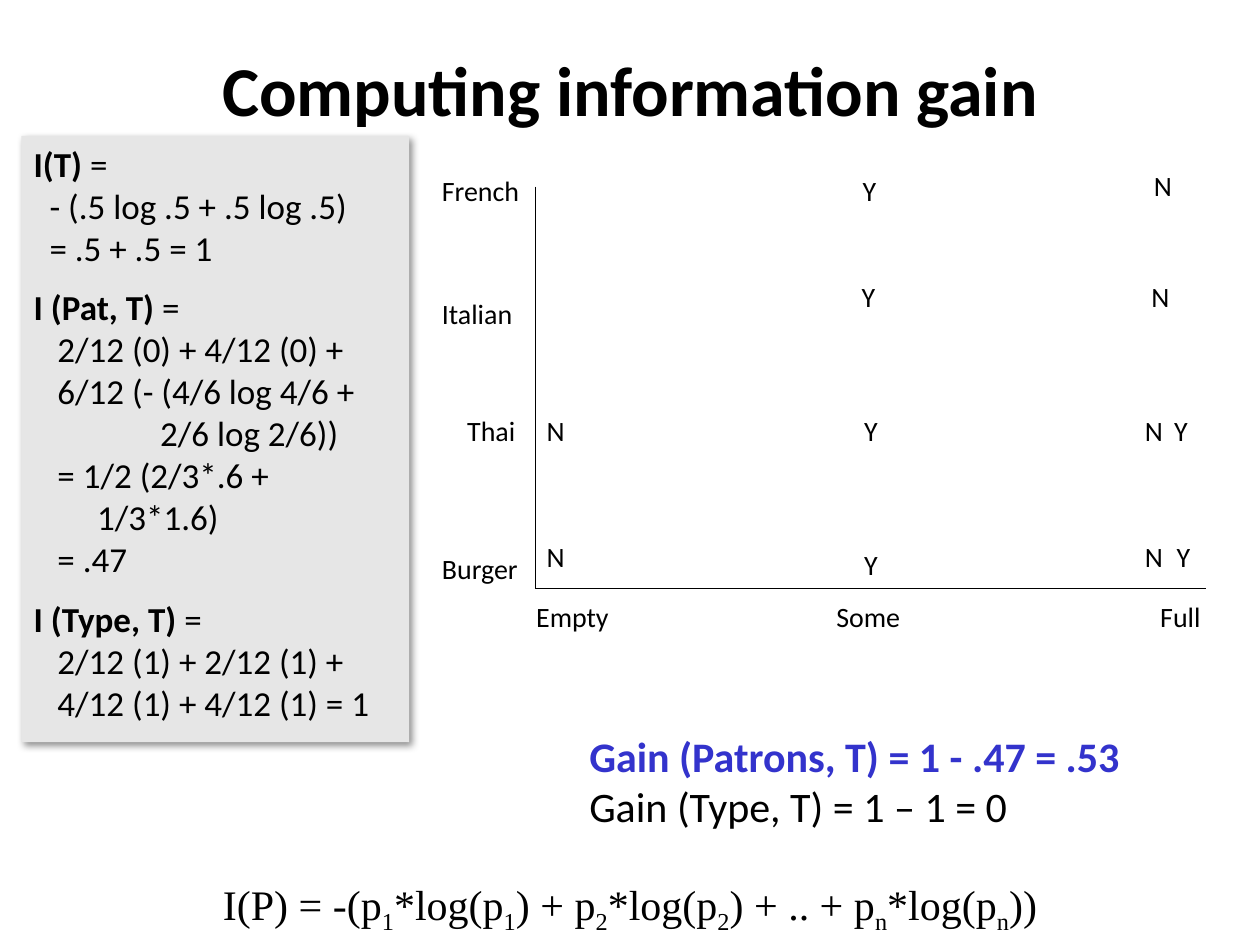
from lxml.etree import SubElement
from pptx import Presentation
from pptx.dml.color import RGBColor
from pptx.enum.shapes import MSO_CONNECTOR, MSO_SHAPE
from pptx.enum.text import MSO_ANCHOR, MSO_AUTO_SIZE, PP_ALIGN
from pptx.oxml.ns import qn
from pptx.util import Cm, Pt

BLACK = RGBColor(0x00, 0x00, 0x00)
BLUE = RGBColor(0x33, 0x33, 0xCC)
GRAY = RGBColor(0xE6, 0xE6, 0xE6)
SANS, SERIF = "Calibri", "Times New Roman"

# Heading of each entropy, then (indent in cm, line)
ENTROPIES = [
    ("I(T)", [(0.32, "- (.5 log .5 + .5 log .5)"), (0.32, "= .5 + .5 = 1")]),
    ("I (Pat, T)", [
        (0.48, "2/12 (0) + 4/12 (0) +"),
        (0.48, "6/12 (- (4/6 log 4/6 +"),
        (2.55, "2/6 log 2/6))"),
        (0.48, "= 1/2 (2/3*.6 +"),
        (1.28, "1/3*1.6)"),
        (0.48, "= .47"),
    ]),
    ("I (Type, T)", [(0.48, "2/12 (1) + 2/12 (1) +"),
                     (0.48, "4/12 (1) + 4/12 (1) = 1")]),
]

# Text, width and (left, top) places in cm from the corner of the plot
PLOT_LABELS = [
    ("French", 2.08, [(0, 0.1)]),
    ("Italian", 1.96, [(0, 2.57)]),
    ("Thai", 1.55, [(0.51, 4.93)]),
    ("Burger", 2.08, [(0, 7.72)]),
    ("Empty", 2.01, [(1.9, 8.69)]),
    ("Some", 1.8, [(7.95, 8.69)]),
    ("Full", 1.35, [(14.48, 8.69)]),
    ("Y", 0.79, [(8.48, 0.1), (8.46, 2.24), (8.51, 4.93), (8.51, 7.64),
                 (14.76, 4.93), (14.81, 7.47)]),
    ("N", 0.89, [(14.35, 0), (14.3, 2.24), (14.17, 4.93), (14.17, 7.47),
                 (2.11, 4.93), (2.11, 7.47)]),
]

# Normal text and subscripts take turns
FORMULA = ["I(P) = -(p", "1", "*log(p", "1", ") + p", "2", "*log(p", "2",
           ") + .. + p", "n", "*log(p", "n", "))"]


def add_run(p, text, size, bold=False, color=BLACK, font=SANS):
    r = p.add_run()
    r.text = text
    r.font.size = Pt(size)
    r.font.bold = bold
    r.font.name = font
    r.font.color.rgb = color
    return r


def add_text_box(shapes, x, y, w, h, wrap=True):
    tf = shapes.add_textbox(Cm(x), Cm(y), Cm(w), Cm(h)).text_frame
    tf.word_wrap = wrap
    tf.auto_size = MSO_AUTO_SIZE.SHAPE_TO_FIT_TEXT
    return tf


def next_paragraph(tf):
    """Return the first paragraph while it is empty, else a new one."""
    first = tf.paragraphs[0]
    return tf.add_paragraph() if first.runs else first


def add_drop_shadow(sp):
    sp.shadow.inherit = False
    effects = sp._element.spPr.find(qn("a:effectLst"))
    shadow = SubElement(effects, qn("a:outerShdw"), blurRad=str(Pt(4)),
                        dist=str(Pt(3)), dir="2700000", algn="tl",
                        rotWithShape="0")
    color = SubElement(shadow, qn("a:srgbClr"), val="000000")
    SubElement(color, qn("a:alpha"), val="43000")


def add_title(slide, x, y, w, h):
    title = slide.shapes.title
    title.left, title.top, title.width, title.height = map(Cm, (x, y, w, h))
    tf = title.text_frame
    tf.vertical_anchor = MSO_ANCHOR.MIDDLE
    p = tf.paragraphs[0]
    p.alignment = PP_ALIGN.CENTER
    add_run(p, "Computing information gain", 40, bold=True)


def add_entropy_panel(slide, x, y, w, h):
    sp = slide.shapes.add_shape(MSO_SHAPE.RECTANGLE, Cm(x), Cm(y), Cm(w), Cm(h))
    sp.fill.solid()
    sp.fill.fore_color.rgb = GRAY
    sp.line.fill.background()
    add_drop_shadow(sp)
    tf = sp.text_frame
    tf.word_wrap = True
    tf.vertical_anchor = MSO_ANCHOR.TOP
    for i, (heading, lines) in enumerate(ENTROPIES):
        p = next_paragraph(tf)
        p.alignment = PP_ALIGN.LEFT
        p.space_before = Pt(10 if i else 0)
        add_run(p, heading + " ", 20, bold=True)
        add_run(p, "=", 20)
        for indent, line in lines:
            p = tf.add_paragraph()
            p.alignment = PP_ALIGN.LEFT
            p._p.get_or_add_pPr().set("marL", str(Cm(indent)))
            add_run(p, line, 20)


def add_axis(shapes, x1, y1, x2, y2):
    line = shapes.add_connector(MSO_CONNECTOR.STRAIGHT,
                                Cm(x1), Cm(y1), Cm(x2), Cm(y2))
    line.line.color.rgb = BLACK
    line.line.width = Pt(0.75)
    SubElement(line._element.spPr, qn("a:effectLst"))


def add_plot(slide, x, y, w, h):
    """Draw examples by restaurant type (rows) and patrons (columns)."""
    shapes = slide.shapes.add_group_shape().shapes
    axis_x = x + 2.13
    add_axis(shapes, axis_x, y + 0.48, axis_x, y + h)
    add_axis(shapes, axis_x, y + h, x + w, y + h)
    for text, width, places in PLOT_LABELS:
        for left, top in places:
            tf = add_text_box(shapes, x + left, y + top, width, 0.94, wrap=False)
            add_run(tf.paragraphs[0], text, 16)


def add_gains(slide, x, y, w, h):
    tf = add_text_box(slide.shapes, x, y, w, h)
    add_run(next_paragraph(tf), "Gain (Patrons, T) = 1 - .47 = .53", 24,
            bold=True, color=BLUE)
    add_run(next_paragraph(tf), "Gain (Type, T) = 1 – 1 = 0", 24)


def add_formula(slide, x, y, w, h):
    p = add_text_box(slide.shapes, x, y, w, h).paragraphs[0]
    p.alignment = PP_ALIGN.CENTER
    for i, text in enumerate(FORMULA):
        r = add_run(p, text, 24, font=SERIF)
        if i % 2:
            r._r.get_or_add_rPr().set("baseline", "-25000")


def main():
    prs = Presentation()
    prs.slide_width, prs.slide_height = Cm(25.4), Cm(19.05)
    slide = prs.slides.add_slide(prs.slide_layouts[5])
    add_entropy_panel(slide, 0.43, 2.74, 7.82, 12.22)
    add_title(slide, 1.9, 0.2, 21.6, 3.18)
    add_plot(slide, 8.66, 3.28, 15.65, 8.58)
    add_gains(slide, 11.63, 14.6, 12.07, 2.31)
    add_formula(slide, 0, 17.58, 25.4, 1.27)
    prs.save("out.pptx")


if __name__ == "__main__":
    main()
